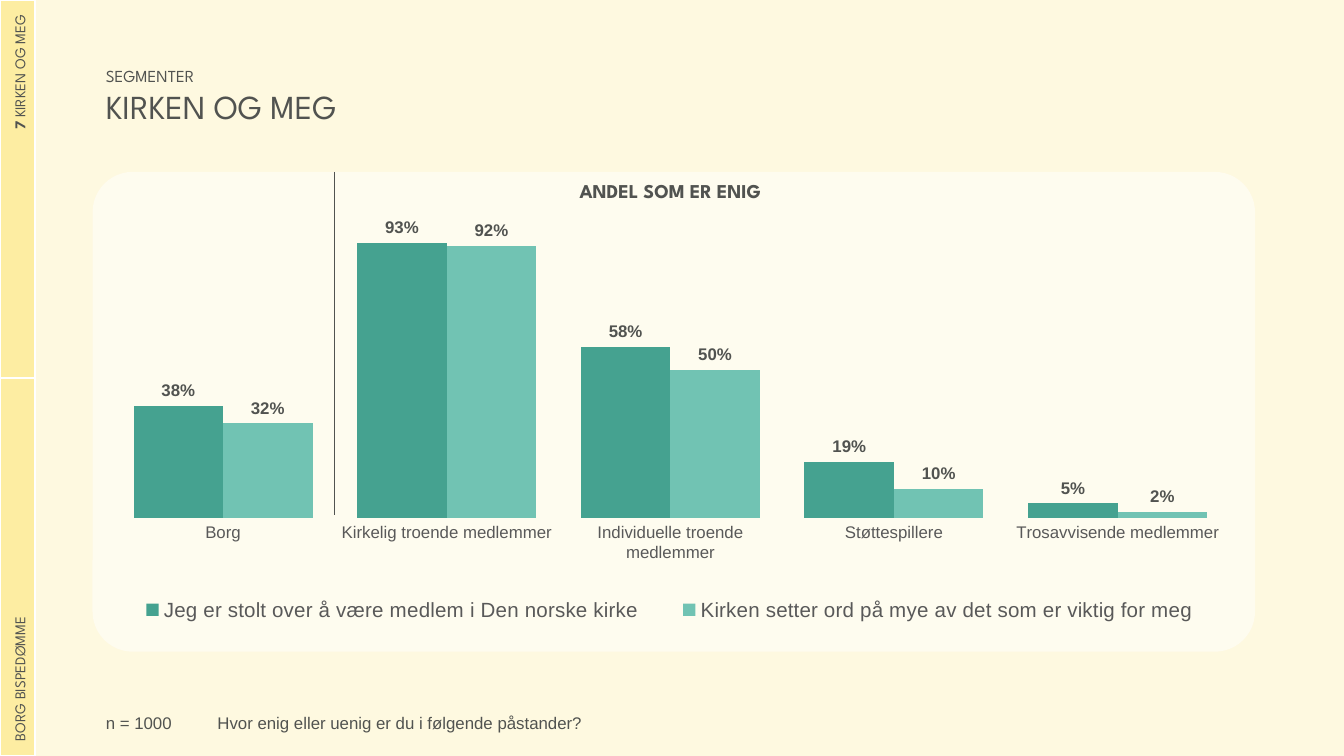
from collections import namedtuple

from lxml.etree import SubElement
from pptx import Presentation
from pptx.chart.data import CategoryChartData
from pptx.dml.color import RGBColor
from pptx.enum.chart import XL_CHART_TYPE as ChartType
from pptx.enum.chart import XL_LABEL_POSITION as LabelPosition
from pptx.enum.chart import XL_LEGEND_POSITION as LegendPosition
from pptx.enum.chart import XL_TICK_MARK as TickMark
from pptx.enum.shapes import MSO_CONNECTOR as Connector
from pptx.enum.shapes import MSO_SHAPE as Shape
from pptx.enum.text import MSO_ANCHOR as Anchor
from pptx.enum.text import PP_ALIGN as Align
from pptx.oxml import parse_xml
from pptx.oxml.ns import nsdecls, qn
from pptx.util import Cm, Pt

COLORS = {
    "background": "FEF9E0", "sidebar": "FDEDA2", "panel": "FFFFFF",
    "text": "515350", "axis": "595959", "pride": "45A290", "words": "71C3B3",
}
HEADING_FONT, BODY_FONT = "League Spartan", "Arial"

CATEGORIES = ["Borg", "Kirkelig troende medlemmer", "Individuelle troende medlemmer",
              "Støttespillere", "Trosavvisende medlemmer"]
SERIES = [
    ("Jeg er stolt over å være medlem i Den norske kirke", "pride",
     (0.38, 0.93, 0.58, 0.19, 0.05)),
    ("Kirken setter ord på mye av det som er viktig for meg", "words",
     (0.32, 0.92, 0.5, 0.1, 0.02)),
]
# Fractions of the chart area
PLOT = {"x": 0.016, "y": 0.105, "w": 0.962, "h": 0.617}
LEGEND = {"x": 0.014, "y": 0.86, "w": 0.965, "h": 0.105}

Box = namedtuple("Box", "left top width height")  # centimetres


def color(name):
    return RGBColor.from_string(COLORS[name])


def fill_solid(target, name):
    target.fill.solid()
    target.fill.fore_color.rgb = color(name)


def format_font(font, size, name=BODY_FONT, ink="text", bold=False):
    font.size, font.name, font.bold = Pt(size), name, bold
    font.color.rgb = color(ink)


def write_text(paragraph, text, align=Align.LEFT, **font_format):
    paragraph.alignment = align
    run = paragraph.add_run()
    run.text = text
    format_font(run.font, **font_format)


def add_text_box(slide, box):
    frame = slide.shapes.add_textbox(*map(Cm, box)).text_frame
    frame.word_wrap = True
    return frame


def set_layout(parent, position, fractions, inner=False):
    """Place a chart part by hand, in fractions of the chart area."""
    for old in parent.findall(qn("c:layout")):
        parent.remove(old)
    layout = parse_xml(f"<c:layout {nsdecls('c')}><c:manualLayout/></c:layout>")
    manual = layout[0]
    if inner:
        SubElement(manual, qn("c:layoutTarget")).set("val", "inner")
    for side in "xy":
        SubElement(manual, qn(f"c:{side}Mode")).set("val", "edge")
    for key, value in fractions.items():
        SubElement(manual, qn(f"c:{key}")).set("val", str(value))
    parent.insert(position, layout)


def add_sidebar(slide, box):
    table = slide.shapes.add_table(2, 1, *map(Cm, box)).table
    table.first_row = table.horz_banding = False
    texts = [(Align.RIGHT, [("7", True), (" KIRKEN OG MEG", False)]),
             (Align.LEFT, [("BORG BISPEDØMME", False)])]
    for row, (align, runs) in enumerate(texts):
        cell = table.cell(row, 0)
        fill_solid(cell, "sidebar")
        cell.vertical_anchor = Anchor.MIDDLE
        cell.margin_left = cell.margin_right = Cm(0.28)
        cell.margin_top = cell.margin_bottom = Cm(0.28)
        cell._tc.get_or_add_tcPr().set("vert", "vert270")
        for text, bold in runs:
            write_text(cell.text_frame.paragraphs[0], text, align=align,
                       size=8, name=HEADING_FONT, bold=bold)


def add_heading(slide, box):
    frame = add_text_box(slide, box)
    write_text(frame.paragraphs[0], "SEGMENTER", size=9, name=HEADING_FONT)
    write_text(frame.add_paragraph(), "KIRKEN OG MEG", size=18, name=HEADING_FONT)


def add_panel(slide, box):
    panel = slide.shapes.add_shape(Shape.ROUNDED_RECTANGLE, *map(Cm, box))
    panel.adjustments[0] = 0.084
    panel.shadow.inherit = False
    panel.line.fill.background()
    fill_solid(panel, "panel")
    fill_color = panel.fill._xPr.find(qn("a:solidFill"))[0]
    SubElement(fill_color, qn("a:alpha")).set("val", "50000")


def add_segment_chart(slide, box):
    data = CategoryChartData(number_format="0%")
    data.categories = CATEGORIES
    for name, _, values in SERIES:
        data.add_series(name, values)
    chart = slide.shapes.add_chart(ChartType.COLUMN_CLUSTERED, *map(Cm, box), data).chart
    chart.has_title = False
    format_font(chart.font, size=10, name=HEADING_FONT)

    # Axes
    value_axis, category_axis = chart.value_axis, chart.category_axis
    value_axis.minimum_scale, value_axis.maximum_scale = 0, 1
    value_axis.has_major_gridlines = False
    value_axis.visible = False
    category_axis.major_tick_mark = category_axis.minor_tick_mark = TickMark.NONE
    category_axis.format.line.fill.background()
    format_font(category_axis.tick_labels.font, size=9, ink="axis")

    # Columns and their labels
    plot = chart.plots[0]
    plot.gap_width, plot.overlap = 50, 0
    plot.vary_by_categories = False
    for series, (_, ink, _) in zip(plot.series, SERIES):
        fill_solid(series.format, ink)
        labels = series.data_labels
        labels.show_value = True
        labels.number_format, labels.number_format_is_linked = "0%", False
        labels.position = LabelPosition.OUTSIDE_END
        format_font(labels.font, size=9, bold=True)

    # Legend below the columns
    chart.has_legend = True
    legend = chart.legend
    legend.position = LegendPosition.RIGHT
    legend.include_in_layout = False
    format_font(legend.font, size=11, ink="axis")
    set_layout(legend._element, 1, LEGEND)
    set_layout(plot._element.getparent(), 0, PLOT, inner=True)


def add_divider(slide, box):
    """Separate the first category from the segments."""
    x = box.left + box.width * (PLOT["x"] + PLOT["w"] / len(CATEGORIES))
    line = slide.shapes.add_connector(Connector.STRAIGHT, Cm(x), Cm(box.top),
                                      Cm(x), Cm(box.top + 6.48))
    line.line.color.rgb = color("text")
    line.line.width = Pt(0.5)
    SubElement(line._element.spPr, qn("a:effectLst"))


def add_chart_region(slide, box):
    add_panel(slide, box)
    add_segment_chart(slide, box)
    title = add_text_box(slide, Box(box.left + 7.54, box.top, 6.76, 0.71))
    write_text(title.paragraphs[0], "ANDEL SOM ER ENIG", align=Align.CENTER,
               size=10.5, name=HEADING_FONT, bold=True)
    add_divider(slide, box)


def add_footer(slide, box):
    notes = [("Hvor enig eller uenig er du i følgende påstander?", 2.11, box.width - 2.11),
             ("n = 1000", 0, 2.72)]
    for text, offset, width in notes:
        frame = add_text_box(slide, Box(box.left + offset, box.top, width, box.height))
        write_text(frame.paragraphs[0], text, size=9)


def main():
    presentation = Presentation()
    presentation.slide_width, presentation.slide_height = Cm(25.4), Cm(14.29)
    slide = presentation.slides.add_slide(presentation.slide_layouts[6])
    fill_solid(slide.background, "background")
    add_chart_region(slide, Box(1.75, 3.25, 21.97, 9.07))
    add_sidebar(slide, Box(0, 0, 0.66, 14.29))
    add_heading(slide, Box(1.75, 1.12, 12.7, 1.42))
    add_footer(slide, Box(1.75, 13.34, 21.92, 0.51))
    presentation.save("out.pptx")


if __name__ == "__main__":
    main()
